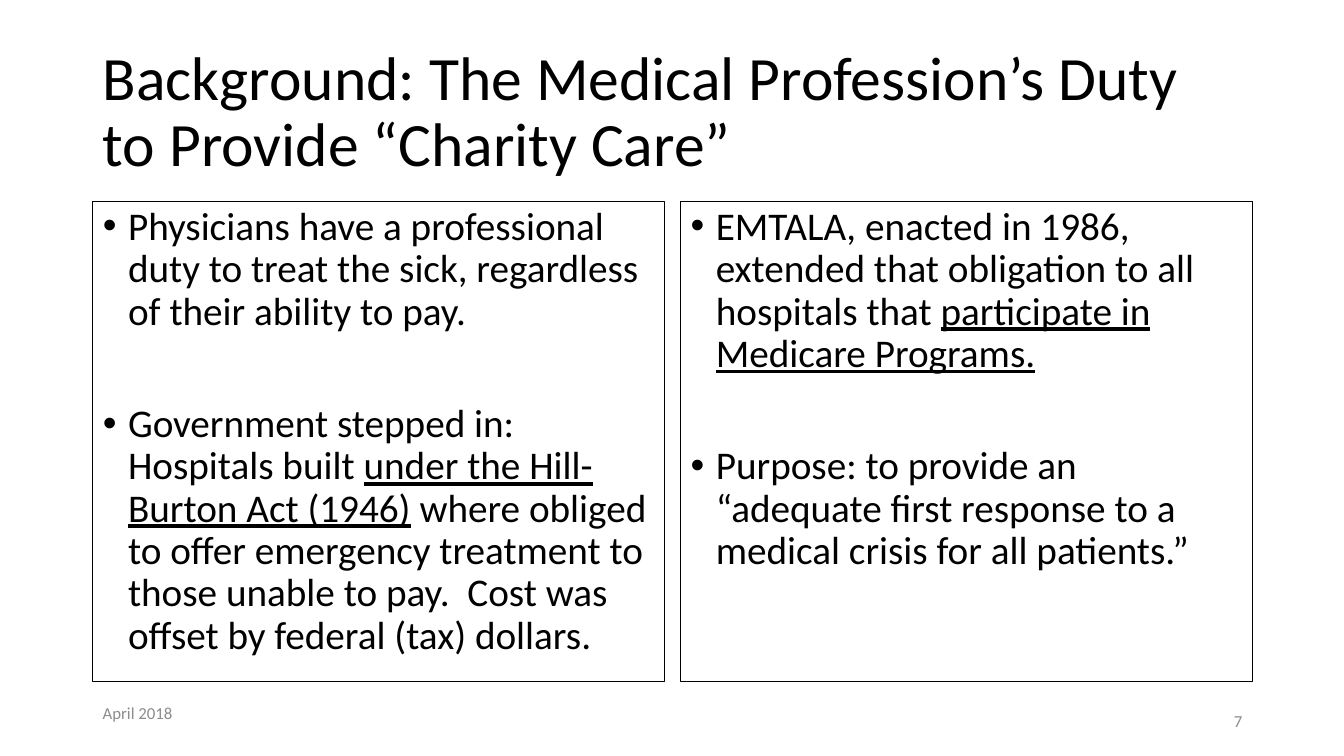
from dataclasses import dataclass

import pptx
import pptx.dml.color
import pptx.enum.text
import pptx.shapes.base
import pptx.slide
import pptx.text.text
import pptx.util

Inches = pptx.util.Inches
Pt = pptx.util.Pt
PP_ALIGN = pptx.enum.text.PP_ALIGN
MSO_ANCHOR = pptx.enum.text.MSO_ANCHOR

COLORS = {"text": "000000", "panel": "FFFFFF", "footer": "8C8C8C"}
FONT = "Calibri"
MARGIN = 0.92
COLUMN_WIDTH = 5.67
COLUMN_PITCH = 5.83
BULLET_INDENT = Inches(0.25)


@dataclass(frozen=True)
class Phrase:
    text: str
    underline: bool = False


@dataclass(frozen=True)
class FooterItem:
    text: str
    left: float
    align: PP_ALIGN
    anchor: MSO_ANCHOR
    top_inset: float


DUTY_COLUMNS: list[list[list[Phrase]]] = [
    [
        [Phrase("Physicians have a professional duty to treat the sick, "
                "regardless of their ability to pay.")],
        [
            Phrase("Government stepped in: Hospitals built "),
            Phrase("under the Hill-Burton Act (1946)", True),
            Phrase(" where obliged to offer emergency treatment to those "
                   "unable to pay.  Cost was offset by federal (tax) dollars."),
        ],
    ],
    [
        [
            Phrase("EMTALA, enacted in 1986, extended that obligation to all "
                   "hospitals that "),
            Phrase("participate in Medicare Programs.", True),
        ],
        [Phrase("Purpose: to provide an “adequate first response to a "
                "medical crisis for all patients.”")],
    ],
]

FOOTER = [
    FooterItem("April 2018", MARGIN, PP_ALIGN.LEFT, MSO_ANCHOR.TOP, 0.02),
    FooterItem("7", 9.42, PP_ALIGN.RIGHT, MSO_ANCHOR.MIDDLE, 0.05),
]


def rgb(name: str) -> pptx.dml.color.RGBColor:
    return pptx.dml.color.RGBColor.from_string(COLORS[name])


def place(shape: pptx.shapes.base.BaseShape, left: float, top: float,
          width: float, height: float) -> None:
    shape.left, shape.top = Inches(left), Inches(top)
    shape.width, shape.height = Inches(width), Inches(height)


def add_phrase(paragraph: pptx.text.text._Paragraph, phrase: Phrase,
               size: float, color: str) -> None:
    run = paragraph.add_run()
    run.text = phrase.text
    run.font.name = FONT
    run.font.size = Pt(size)
    run.font.color.rgb = rgb(color)
    if phrase.underline:
        run.font.underline = True


def fill_title(slide: pptx.slide.Slide, text: str) -> None:
    title = slide.shapes.title
    place(title, MARGIN, 0.4, 11.5, 1.45)
    frame = title.text_frame
    frame.auto_size = pptx.enum.text.MSO_AUTO_SIZE.NONE
    frame.vertical_anchor = MSO_ANCHOR.MIDDLE
    heading = frame.paragraphs[0]
    heading.alignment = PP_ALIGN.LEFT
    heading.line_spacing = 0.9
    add_phrase(heading, Phrase(text), 44, "text")


def fill_column(slide: pptx.slide.Slide, index: int,
                points: list[list[Phrase]]) -> None:
    column = slide.placeholders[index + 1]
    place(column, MARGIN + index * COLUMN_PITCH, 2, COLUMN_WIDTH, 4.76)
    column.fill.solid()
    column.fill.fore_color.rgb = rgb("panel")
    column.line.color.rgb = rgb("text")
    column.line.width = Pt(1)
    frame = column.text_frame
    frame.auto_size = pptx.enum.text.MSO_AUTO_SIZE.NONE
    frame.vertical_anchor = MSO_ANCHOR.TOP
    for number, phrases in enumerate(points):
        point = frame.add_paragraph() if number else frame.paragraphs[0]
        properties = point._p.get_or_add_pPr()
        properties.set("marL", str(BULLET_INDENT))
        properties.set("indent", str(-BULLET_INDENT))
        point.line_spacing = 0.9
        point.space_before = Pt(50 if number else 0)
        for phrase in phrases:
            add_phrase(point, phrase, 28, "text")


def add_footer(slide: pptx.slide.Slide, item: FooterItem) -> None:
    footer = slide.shapes.add_textbox(
        Inches(item.left), Inches(6.95), Inches(3), Inches(0.4))
    frame = footer.text_frame
    frame.word_wrap = True
    frame.vertical_anchor = item.anchor
    frame.margin_top = Inches(item.top_inset)
    paragraph = frame.paragraphs[0]
    paragraph.alignment = item.align
    add_phrase(paragraph, Phrase(item.text), 12, "footer")


def main() -> None:
    deck = pptx.Presentation()
    deck.slide_width, deck.slide_height = Inches(13.33), Inches(7.5)
    slide = deck.slides.add_slide(deck.slide_layouts[3])
    fill_title(slide, "Background: The Medical Profession’s Duty "
                      "to Provide “Charity Care”")
    for index, points in enumerate(DUTY_COLUMNS):
        fill_column(slide, index, points)
    for item in FOOTER:
        add_footer(slide, item)
    deck.save("out.pptx")


if __name__ == "__main__":
    main()
